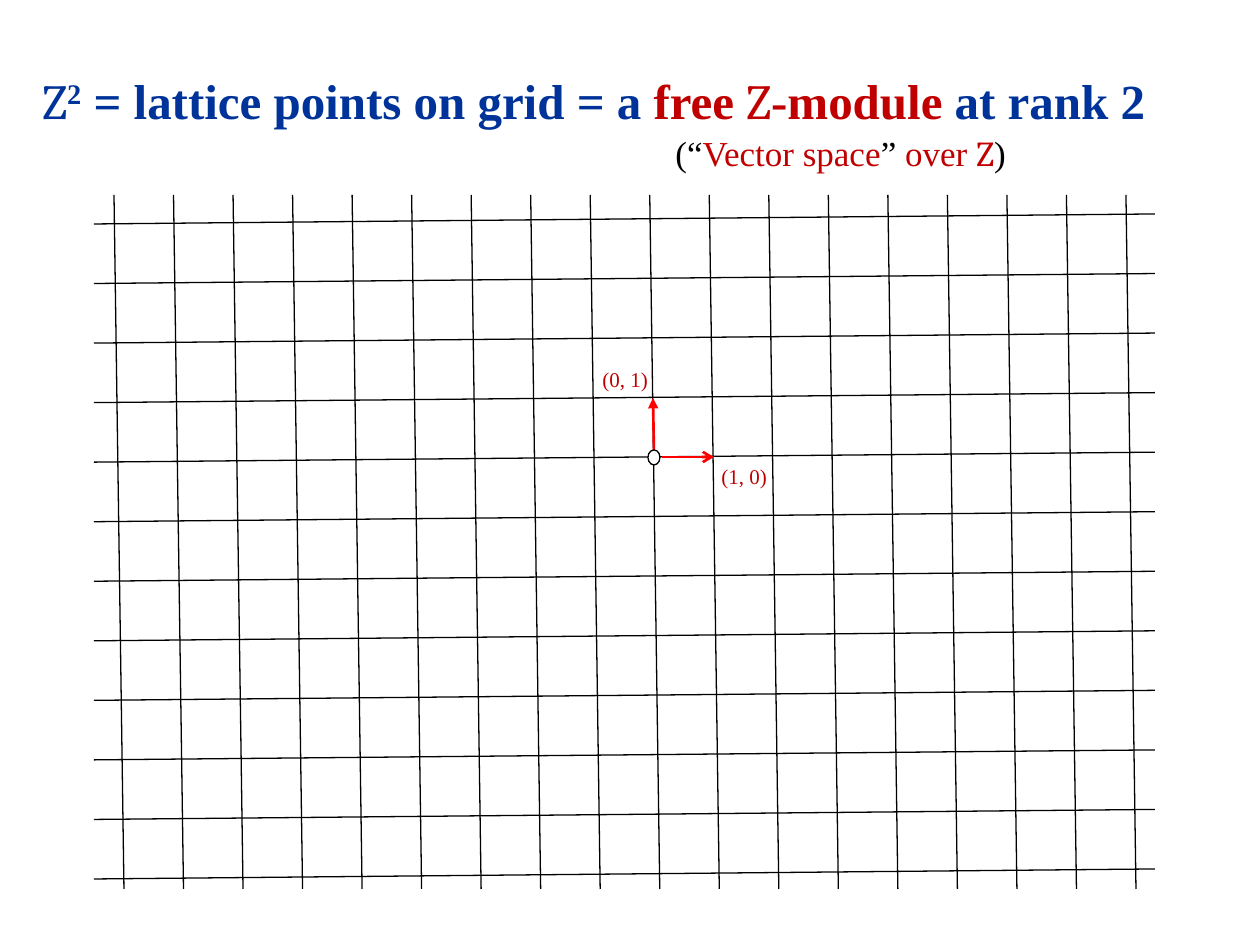
from lxml.etree import SubElement
from pptx import Presentation
from pptx.dml.color import RGBColor
from pptx.enum.shapes import MSO_CONNECTOR as Connector, MSO_SHAPE as Shape
from pptx.enum.text import MSO_ANCHOR as Anchor
from pptx.oxml.ns import qn
from pptx.util import Emu, Pt

PX_PER_INCH = 126
COLORS = {"blue": "003399", "crimson": "C00000", "red": "FF0000",
          "black": "000000", "white": "FFFFFF"}
SERIF, MATH = "Times New Roman", "Cambria"


def px(length):
    return Emu(round(length * 914400 / PX_PER_INCH))


def rgb(name):
    return RGBColor.from_string(COLORS[name])


def add_text(slide, box, runs, size, anchor=Anchor.TOP, wrap=True):
    """Write one line of (text, colour, font, bold, superscript) runs."""
    frame = slide.shapes.add_textbox(*map(px, box)).text_frame
    frame.word_wrap = wrap
    frame.vertical_anchor = anchor
    for text, color, face, bold, superscript in runs:
        run = frame.paragraphs[0].add_run()
        run.text = text
        font = run.font
        font.size, font.name, font.bold = Pt(size), face, bold
        font.color.rgb = rgb(color)
        if superscript:
            font._element.set("baseline", "30000")


def add_line(slide, start, end, color="black", width=0.75, head=None):
    line = slide.shapes.add_connector(
        Connector.STRAIGHT, *map(px, (*start, *end)))
    line.line.color.rgb = rgb(color)
    line.line.width = Pt(width)
    if head:
        SubElement(line.line._get_or_add_ln(), qn("a:tailEnd"), type=head)
    SubElement(line._element.spPr, qn("a:effectLst"))


def add_title(slide, box):
    add_text(slide, box, [
        ("Z", "blue", MATH, False, False),
        ("2", "blue", SERIF, True, True),
        (" = lattice points on grid = a ", "blue", SERIF, True, False),
        ("free ", "crimson", SERIF, True, False),
        ("Z", "crimson", MATH, False, False),
        ("-module ", "crimson", SERIF, True, False),
        ("at rank 2", "blue", SERIF, True, False),
    ], 28, Anchor.MIDDLE, wrap=False)


def add_subtitle(slide, box):
    add_text(slide, box, [
        ("(“", "black", SERIF, False, False),
        ("Vector space", "crimson", SERIF, False, False),
        ("”", "black", SERIF, False, False),
        (" over ", "crimson", SERIF, False, False),
        ("Z", "crimson", MATH, False, False),
        (")", "black", SERIF, False, False),
    ], 20)


def add_lattice(slide, box, rows=12, columns=18):
    """Draw a grid whose lines all lean by the same small tilt."""
    left, top, width, height = box
    tilt = 10
    row_gap = (height - 39) / (rows - 1)
    column_gap = (width - 49) / (columns - 1)
    for row in range(rows):
        y = top + 29 + row * row_gap
        add_line(slide, (left, y), (left + width, y - tilt))
    for column in range(columns):
        x = left + 20 + column * column_gap
        add_line(slide, (x, top), (x + tilt, top + height))


def add_basis(slide, box):
    """Draw the two unit vectors, their labels and the origin."""
    left, top, _, _ = box

    def at(x, y):
        return left + x, top + y

    add_line(slide, at(72, 97), at(124, 97), "red", 1.5, "arrow")
    add_line(slide, at(64, 91), at(63, 38), "red", 1.5, "triangle")
    for label, corner in (("(1, 0)", at(119, 97)), ("(0, 1)", at(0, 0))):
        add_text(slide, (*corner, 79, 38),
                 [(label, "crimson", SERIF, False, False)], 12)
    origin = slide.shapes.add_shape(
        Shape.OVAL, *map(px, (*at(58, 90), 12, 15)))
    origin.shadow.inherit = False
    origin.fill.solid()
    origin.fill.fore_color.rgb = rgb("white")
    origin.line.color.rgb = rgb("black")
    origin.line.width = Pt(0.75)


def main():
    deck = Presentation()
    deck.slide_width, deck.slide_height = px(1260), px(945)
    slide = deck.slides.add_slide(deck.slide_layouts[6])
    add_title(slide, (30, 60, 1187, 79))
    add_lattice(slide, (94, 195, 1061, 694))
    add_basis(slide, (590, 360, 198, 135))
    add_subtitle(slide, (663, 125, 374, 55))
    deck.save("out.pptx")


if __name__ == "__main__":
    main()
